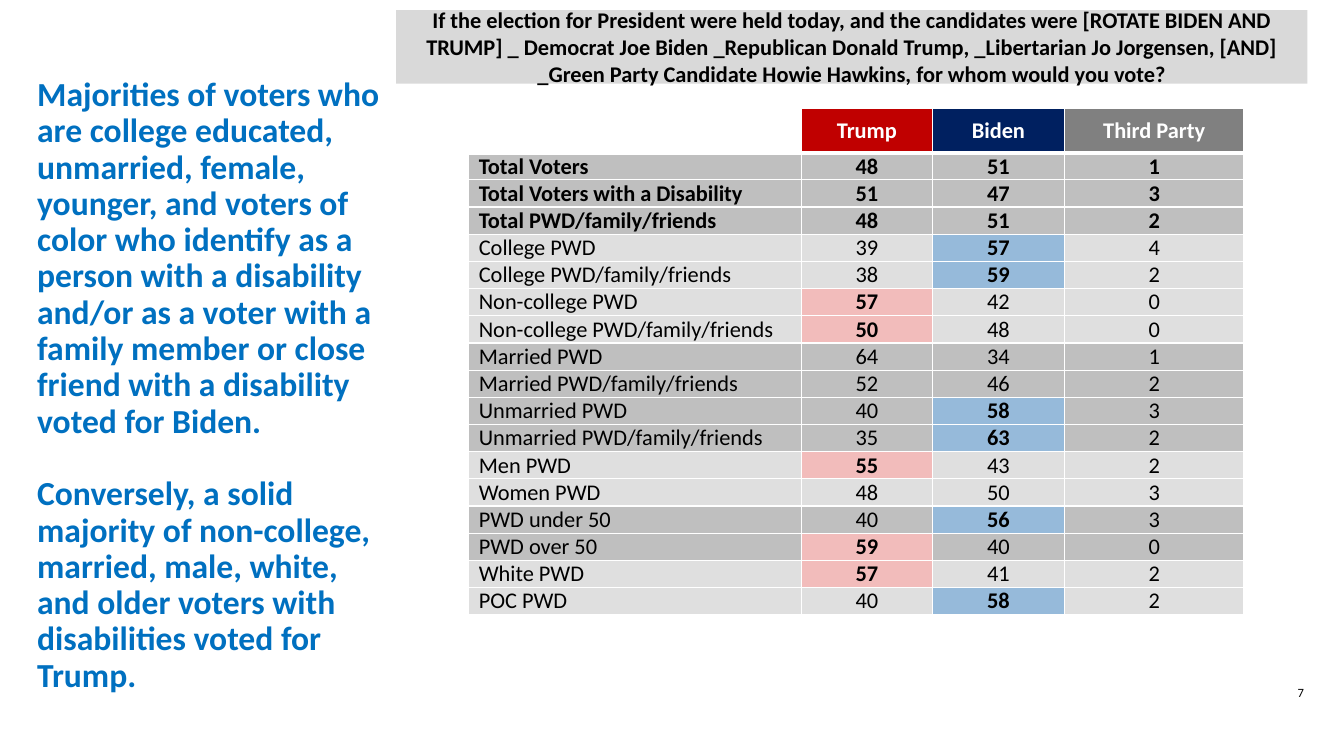
from lxml import etree
from pptx import Presentation, util as u
from pptx.dml.color import RGBColor
from pptx.enum import shapes, text
from pptx.oxml import ns

rgb = RGBColor.from_string
prs = Presentation()
prs.slide_width, prs.slide_height = u.Inches(13.333), u.Inches(7.5)
s = prs.slides.add_slide(prs.slide_layouts[6])

# One percent of the slide's width and height
W, H = prs.slide_width / 100, prs.slide_height / 100


def area(x, y, w, h):
    return int(x * W), int(y * H), int(w * W), int(h * H)


def write(tf, *lines, size=16, color="000000", bold=False,
          align=text.PP_ALIGN.CENTER, spacing=None, gap=0):
    tf.word_wrap = True
    for i, line in enumerate(lines):
        p = tf.paragraphs[0] if i == 0 else tf.add_paragraph()
        p.alignment, p.line_spacing = align, spacing
        if i and gap:
            p.space_before = u.Pt(gap)
        r = p.add_run()
        r.text = line
        r.font.name, r.font.size, r.font.bold = "Calibri", u.Pt(size), bold
        r.font.color.rgb = rgb(color)


# Page number
sp = s.shapes.add_textbox(*area(93.98, 90, 5.63, 4.4))
write(sp.text_frame, "7", size=9)

# Table contents: label, Trump, Biden, third party, highlighted column
DARK, LIGHT = "BFBFBF", "DFDFDF"
TRUMP, BIDEN = 1, 2
highlights = {TRUMP: "F2BCBB", BIDEN: "96BADA"}
header = [("", "FFFFFF"), ("Trump", "C00000"), ("Biden", "002060"), ("Third Party", "808080")]
bands = [
    (DARK, True, [("Total Voters", 48, 51, 1, None),
                  ("Total Voters with a Disability", 51, 47, 3, None),
                  ("Total PWD/family/friends", 48, 51, 2, None)]),
    (LIGHT, False, [("College PWD", 39, 57, 4, BIDEN),
                    ("College PWD/family/friends", 38, 59, 2, BIDEN),
                    ("Non-college PWD", 57, 42, 0, TRUMP),
                    ("Non-college PWD/family/friends", 50, 48, 0, TRUMP)]),
    (DARK, False, [("Married PWD", 64, 34, 1, None),
                   ("Married PWD/family/friends", 52, 46, 2, None),
                   ("Unmarried PWD", 40, 58, 3, BIDEN),
                   ("Unmarried PWD/family/friends", 35, 63, 2, BIDEN)]),
    (LIGHT, False, [("Men PWD", 55, 43, 2, TRUMP),
                    ("Women PWD", 48, 50, 3, None)]),
    (DARK, False, [("PWD under 50", 40, 56, 3, BIDEN),
                   ("PWD over 50", 59, 40, 0, TRUMP)]),
    (LIGHT, False, [("White PWD", 57, 41, 2, TRUMP),
                    ("POC PWD", 40, 58, 2, BIDEN)]),
]

# Each cell as text, fill, text colour, bold
grid = [[(label, fill, "FFFFFF", True) for label, fill in header]]
for fill, bold, rows in bands:
    for *values, mark in rows:
        grid.append([(str(v), highlights[c] if c == mark else fill, "000000", bold or c == mark)
                     for c, v in enumerate(values)])

# Table
col_shares = [24.75, 9.75, 9.83, 13.35]
head_share, row_share = 5.8, 3.6
table_height = head_share + row_share * (len(grid) - 1)
table = s.shapes.add_table(len(grid), len(col_shares),
                           *area(34.88, 14.4, sum(col_shares), table_height)).table
for col, share in zip(table.columns, col_shares):
    col.width = int(share * W)
for i, cells in enumerate(grid):
    table.rows[i].height = int((row_share if i else head_share) * H)
    for j, (label, fill, color, bold) in enumerate(cells):
        cell = table.cell(i, j)
        cell.vertical_anchor = text.MSO_ANCHOR.MIDDLE
        if i:
            cell.margin_top = cell.margin_bottom = 0
        # White borders, thicker around the foot of the header
        for side in "LRTB":
            thick = (i, side) in ((0, "B"), (1, "T"))
            ln = etree.SubElement(cell._tc.get_or_add_tcPr(), ns.qn(f"a:ln{side}"),
                                  w=str(u.Pt(3 if thick else 1)))
            solid = etree.SubElement(ln, ns.qn("a:solidFill"))
            etree.SubElement(solid, ns.qn("a:srgbClr"), val="FFFFFF")
        cell.fill.solid()
        cell.fill.fore_color.rgb = rgb(fill)
        if label:
            align = text.PP_ALIGN.CENTER if j else text.PP_ALIGN.LEFT
            write(cell.text_frame, label, color=color, bold=bold, align=align)

# Survey question
sp = s.shapes.add_shape(shapes.MSO_SHAPE.RECTANGLE, *area(29.48, 1.33, 67.8, 9.73))
sp.shadow.inherit = False
sp.fill.solid()
sp.fill.fore_color.rgb = rgb("D9D9D9")
sp.line.fill.background()
sp.text_frame.vertical_anchor = text.MSO_ANCHOR.MIDDLE
write(sp.text_frame,
      "If the election for President were held today, and the candidates were "
      "[ROTATE BIDEN AND TRUMP] _ Democrat Joe Biden _Republican Donald Trump, "
      "_Libertarian Jo Jorgensen, [AND] _Green Party Candidate Howie Hawkins, "
      "for whom would you vote?", bold=True)

# Takeaway, raised by a deep bottom margin
sp = s.shapes.add_textbox(*area(2.03, 14.4, 27.38, 82.93))
tf = sp.text_frame
tf.vertical_anchor = text.MSO_ANCHOR.MIDDLE
tf.margin_bottom = int(10.27 * H)
write(tf,
      "Majorities of voters who are college educated, unmarried, female, younger, "
      "and voters of color who identify as a person with a disability and/or as a voter "
      "with a family member or close friend with a disability voted for Biden.",
      "Conversely, a solid majority of non-college, married, male, white, and older "
      "voters with disabilities voted for Trump.",
      size=24, color="0070C0", bold=True, align=text.PP_ALIGN.LEFT, spacing=0.9, gap=26)

prs.save("out.pptx")
